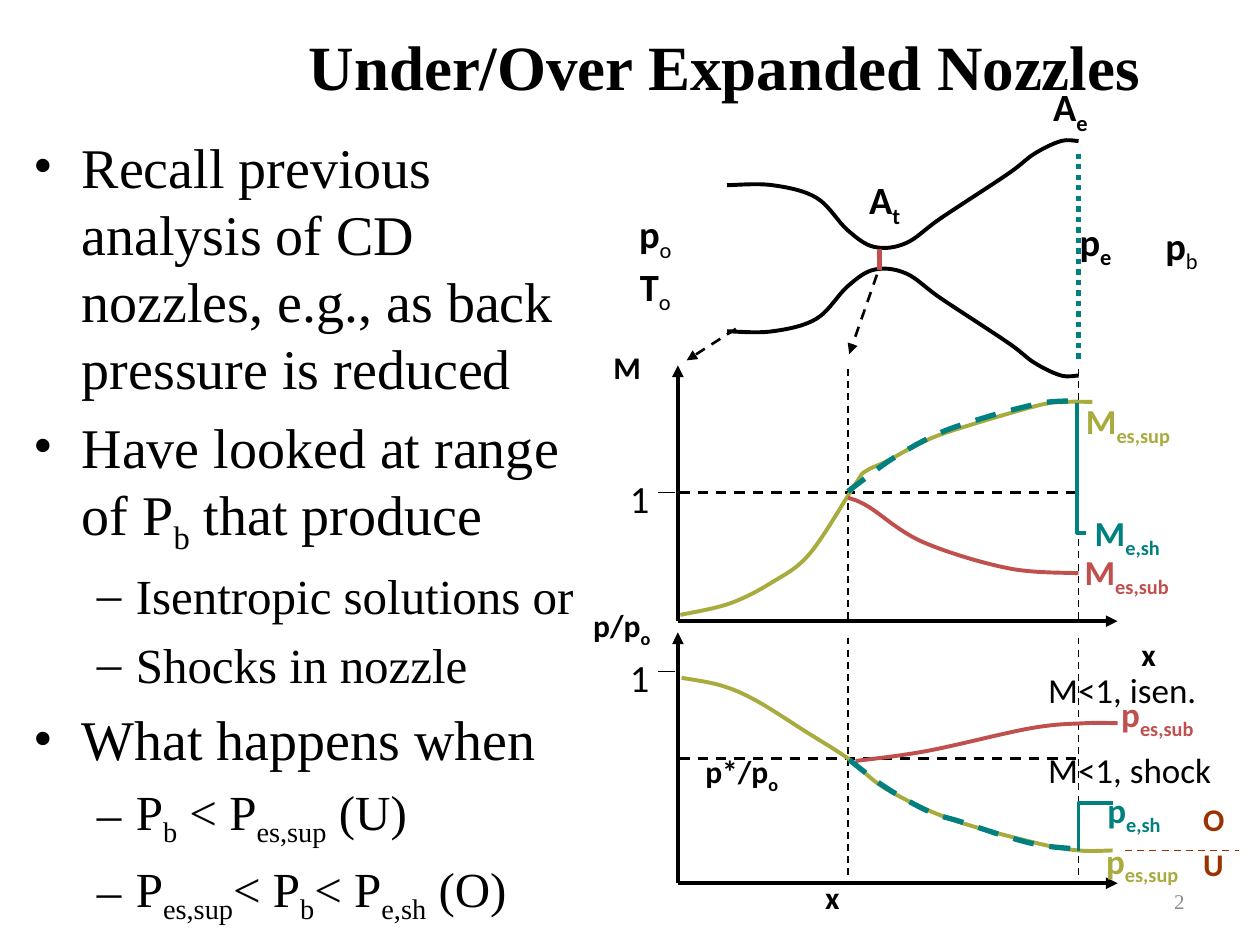
from dataclasses import dataclass

from lxml.etree import SubElement
from pptx import Presentation
from pptx.dml.color import RGBColor
from pptx.enum.dml import MSO_LINE_DASH_STYLE as Dash
from pptx.enum.shapes import MSO_CONNECTOR as Connector
from pptx.enum.text import MSO_ANCHOR as Anchor, PP_ALIGN as Align
from pptx.oxml.ns import qn
from pptx.util import Inches, Pt


@dataclass(frozen=True)
class Theme:
    serif: str = "Times New Roman"
    sans: str = "Calibri"
    black: str = "000000"
    gray: str = "8C8C8C"
    olive: str = "A8AB3D"
    red: str = "C0504D"
    teal: str = "008080"
    rust: str = "993300"
    title: int = 36
    body: int = 32
    detail: int = 28
    station: int = 22
    curve: int = 20
    axis: int = 18
    footer: int = 12


THEME = Theme()

BODY = [
    (0, "Recall previous analysis of CD nozzles, e.g., as back pressure is reduced"),
    (0, "Have looked at range of P|b| that produce"),
    (1, "Isentropic solutions or"),
    (1, "Shocks in nozzle"),
    (0, "What happens when"),
    (1, "P|b| < P|es,sup| (U)"),
    (1, "P|es,sup|< P|b|< P|e,sh| (O)"),
]

STATION_LABELS = [
    ("p|b", 9.15, 1.71, 0.49, False),
    ("p|e", 8.47, 1.68, 0.47, True),
    ("A|e", 8.26, 0.61, 0.56, True),
    ("A|t", 6.8, 1.35, 0.55, True),
]
AXIS_LABELS = [
    ("p*/p|o", 5.5, 5.92, 0.97, THEME.black),
    ("x", 6.45, 6.92, 0.5, THEME.black),
    ("p/p|o", 4.61, 4.76, 0.81, THEME.black),
    ("x", 8.96, 4.99, 0.5, THEME.black),
    ("M", 4.77, 2.71, 0.81, THEME.black),
    ("U", 9.45, 6.66, 0.47, THEME.rust),
    ("O", 9.45, 6.3, 0.47, THEME.rust),
]
CURVE_LABELS = [
    ("p|es,sup", 8.68, 6.61, 0.82, THEME.olive),
    ("M|es,sup", 8.52, 3.12, 0.93, THEME.olive),
    ("M|es,sub", 8.51, 4.32, 0.93, THEME.red),
    ("p|es,sub", 8.8, 5.45, 0.82, THEME.red),
    ("p|e,sh", 8.69, 6.21, 0.65, THEME.teal),
    ("M|e,sh", 8.59, 4.01, 0.76, THEME.teal),
]

NOZZLE_AXIS = 2.05
NOZZLE_WALL = [(5.77, 0.58), (6.13, 0.58), (6.48, 0.48), (6.73, 0.22), (6.94, 0.09),
               (7.19, 0.12), (7.47, 0.32), (8, 0.67), (8.21, 0.83), (8.42, 0.93),
               (8.56, 0.93)]
PRESSURE_SUPERSONIC = [(5.41, 5.38), (5.72, 5.44), (6, 5.56), (6.4, 5.81), (6.73, 6.02),
                       (7.03, 6.26), (7.54, 6.5), (8.22, 6.69), (8.56, 6.75), (8.83, 6.75)]
PRESSURE_SUBSONIC = [(6.79, 6.04), (7.36, 5.96), (8.18, 5.78), (8.61, 5.74), (8.87, 5.74)]
PRESSURE_BEFORE_SHOCK = [(6.74, 6.03), (7.03, 6.25), (7.37, 6.44), (7.62, 6.52),
                         (7.99, 6.64), (8.27, 6.71), (8.57, 6.74)]
PRESSURE_SHOCK = [(8.56, 6.75), (8.56, 6.37), (8.83, 6.37)]
MACH_SUPERSONIC = [(5.4, 4.88), (5.79, 4.79), (6.13, 4.62), (6.43, 4.39), (6.79, 3.84),
                   (6.87, 3.74), (7.04, 3.66), (7.28, 3.53), (7.55, 3.42), (8.23, 3.22),
                   (8.46, 3.19), (8.67, 3.19)]
MACH_SUBSONIC = [(6.73, 3.95), (6.89, 4.02), (7.32, 4.3), (8, 4.51), (8.56, 4.55)]
MACH_BEFORE_SHOCK = [(6.73, 3.9), (6.89, 3.78), (7.1, 3.63), (7.45, 3.44), (7.83, 3.31),
                     (8.17, 3.22), (8.33, 3.19), (8.56, 3.18)]
MACH_SHOCK = [(8.55, 3.2), (8.55, 4.23), (8.62, 4.23)]


def add_spans(para, text, size, font, color, bold=False, sub_bold=False):
    for row, line in enumerate(text.split("\n")):
        if row:
            para.add_line_break()
        for index, piece in enumerate(line.split("|")):
            span = para.add_run()
            span.text = piece
            span.font.size = Pt(size)
            span.font.name = font
            span.font.color.rgb = RGBColor.from_string(color)
            span.font.bold = sub_bold if index % 2 else bold
            if index % 2:
                span.font._element.set("baseline", "-25000")


def add_box(page, left, top, width, height, wrap=True, anchor=Anchor.TOP):
    box = page.shapes.add_textbox(Inches(left), Inches(top), Inches(width), Inches(height))
    box.text_frame.word_wrap = wrap
    box.text_frame.vertical_anchor = anchor
    return box.text_frame


def add_label(page, text, left, top, width, height, size, color=THEME.black, bold=True,
              sub_bold=True, font=THEME.sans, align=Align.LEFT, wrap=True, anchor=Anchor.TOP):
    para = add_box(page, left, top, width, height, wrap, anchor).paragraphs[0]
    para.alignment = align
    add_spans(para, text, size, font, color, bold, sub_bold)


def add_body(page):
    frame = add_box(page, 0.17, 1, 4.75, 6.25)
    styles = [(0.38, -0.38, "•", THEME.body), (0.81, -0.31, "–", THEME.detail)]
    for index, (level, text) in enumerate(BODY):
        margin, indent, mark, size = styles[level]
        para = frame.add_paragraph() if index else frame.paragraphs[0]
        para.level = level
        if index:
            para.space_before = Pt(size * 0.2)
        properties = para._p.get_or_add_pPr()
        properties.set("marL", str(Inches(margin)))
        properties.set("indent", str(Inches(indent)))
        SubElement(properties, qn("a:buFont"), typeface=THEME.serif)
        SubElement(properties, qn("a:buChar"), char=mark)
        add_spans(para, text, size, THEME.serif, THEME.black)


def style_line(shape, color, weight, dash=None):
    shape.line.color.rgb = RGBColor.from_string(color)
    shape.line.width = Pt(weight)
    if dash:
        shape.line.dash_style = dash


def add_line(page, start, end, weight, color=THEME.black, dash=None, arrow=False):
    line = page.shapes.add_connector(Connector.STRAIGHT, *map(Inches, start + end))
    style_line(line, color, weight, dash)
    if arrow:
        SubElement(line.line._get_or_add_ln(), qn("a:tailEnd"), type="triangle")
    SubElement(line._element.spPr, qn("a:effectLst"))


def add_outline(page, points, color, weight=2.25, dash=None):
    spots = [(Inches(x), Inches(y)) for x, y in points]
    builder = page.shapes.build_freeform(*spots[0])
    builder.add_line_segments(spots[1:], close=False)
    shape = builder.convert_to_shape()
    shape.shadow.inherit = False
    shape.fill.background()
    style_line(shape, color, weight, dash)
    return shape


def add_curve(page, points, color, weight=2.25, dash=None):
    shape = add_outline(page, points, color, weight, dash)
    knots = [(int(pt.get("x")), int(pt.get("y"))) for pt in shape._element.iter(qn("a:pt"))]
    knots = [knots[0], *knots, knots[-1]]
    for index, segment in enumerate(list(shape._element.iter(qn("a:lnTo")))):
        before, start, end, after = knots[index:index + 4]
        leave = [a + (c - b) / 6 for a, b, c in zip(start, before, end)]
        arrive = [a - (c - b) / 6 for a, b, c in zip(end, start, after)]
        segment.clear()
        segment.tag = qn("a:cubicBezTo")
        for x, y in (leave, arrive, end):
            SubElement(segment, qn("a:pt"), x=str(round(x)), y=str(round(y)))


def add_axes(page, top, bottom, level, unit, guide_top):
    add_line(page, (5.39, level), (8.56, level), 1.5, dash=Dash.DASH)
    add_line(page, (5.38, bottom), (5.38, top), 2.25, arrow=True)
    add_line(page, (5.38, bottom), (8.87, bottom), 2.25, arrow=True)
    add_line(page, (5.36, unit), (5.22, unit), 0.75)
    add_label(page, "1", 4.9, unit - 0.19, 0.43, 0.47, THEME.station, bold=False)
    for x in (6.73, 8.56):
        add_line(page, (x, guide_top), (x, bottom), 1, dash=Dash.DASH)


def add_nozzle(page):
    for side in (-1, 1):
        wall = [(x, NOZZLE_AXIS + side * radius) for x, radius in NOZZLE_WALL]
        add_curve(page, wall, THEME.black)
    add_line(page, (5.84, 2.61), (5.45, 2.86), 1.5, dash=Dash.DASH, arrow=True)
    add_line(page, (6.96, 2.18), (6.74, 2.81), 1.5, dash=Dash.DASH, arrow=True)
    add_line(page, (6.98, 2.14), (6.98, 1.98), 3, THEME.red)
    add_line(page, (8.56, 1.22), (8.56, 2.87), 3, THEME.teal, Dash.ROUND_DOT)


def add_labels(page):
    add_label(page, "p|o\nT|o", 4.84, 1.62, 0.72, 0.83, THEME.station,
              sub_bold=False, align=Align.CENTER)
    for text, left, top, width, sub_bold in STATION_LABELS:
        add_label(page, text, left, top, width, 0.47, THEME.station, sub_bold=sub_bold)
    for text, left, top, width, color in AXIS_LABELS:
        add_label(page, text, left, top, width, 0.5, THEME.axis, color)
    for text, left, top, width, color in CURVE_LABELS:
        add_label(page, text, left, top, width, 0.43, THEME.curve, color, wrap=False)
    for text, top in (("M<1, isen.", 5.26), ("M<1, shock", 5.89)):
        add_label(page, text, 8.22, top, 1.54, 0.43, THEME.curve, bold=False)


def main():
    deck = Presentation()
    deck.slide_width, deck.slide_height = Inches(10), Inches(7.5)
    page = deck.slides.add_slide(deck.slide_layouts[6])
    add_label(page, "Under/Over Expanded Nozzles", 2, 0.15, 7.5, 0.73, THEME.title,
              font=THEME.serif, align=Align.CENTER, anchor=Anchor.MIDDLE)
    add_body(page)
    add_label(page, "2", 7.17, 6.95, 2.33, 0.4, THEME.footer, THEME.gray, bold=False,
              font=THEME.serif, align=Align.RIGHT, anchor=Anchor.MIDDLE)
    add_nozzle(page)
    add_axes(page, 2.9, 4.93, 3.91, 3.91, 2.93)
    add_axes(page, 5.02, 7.01, 6.02, 5.33, 5.06)
    for points in (PRESSURE_SUPERSONIC, MACH_SUPERSONIC):
        add_curve(page, points, THEME.olive)
    for points in (PRESSURE_SUBSONIC, MACH_SUBSONIC):
        add_curve(page, points, THEME.red)
    for points in (PRESSURE_BEFORE_SHOCK, MACH_BEFORE_SHOCK):
        add_curve(page, points, THEME.teal, 3, Dash.DASH)
    for points in (PRESSURE_SHOCK, MACH_SHOCK):
        add_outline(page, points, THEME.teal)
    add_line(page, (8.93, 6.75), (9.83, 6.75), 1, THEME.rust, Dash.DASH)
    add_labels(page)


    deck.save("out.pptx")


if __name__ == "__main__":
    main()
